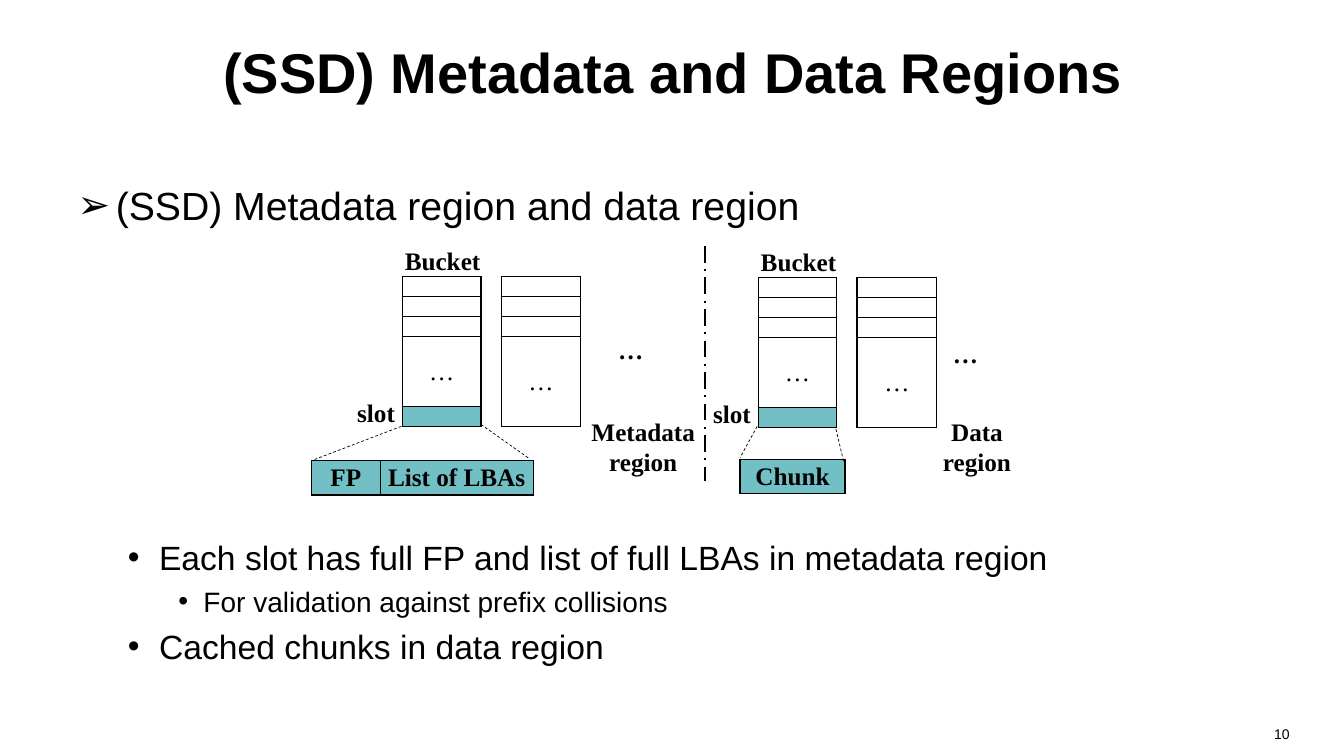
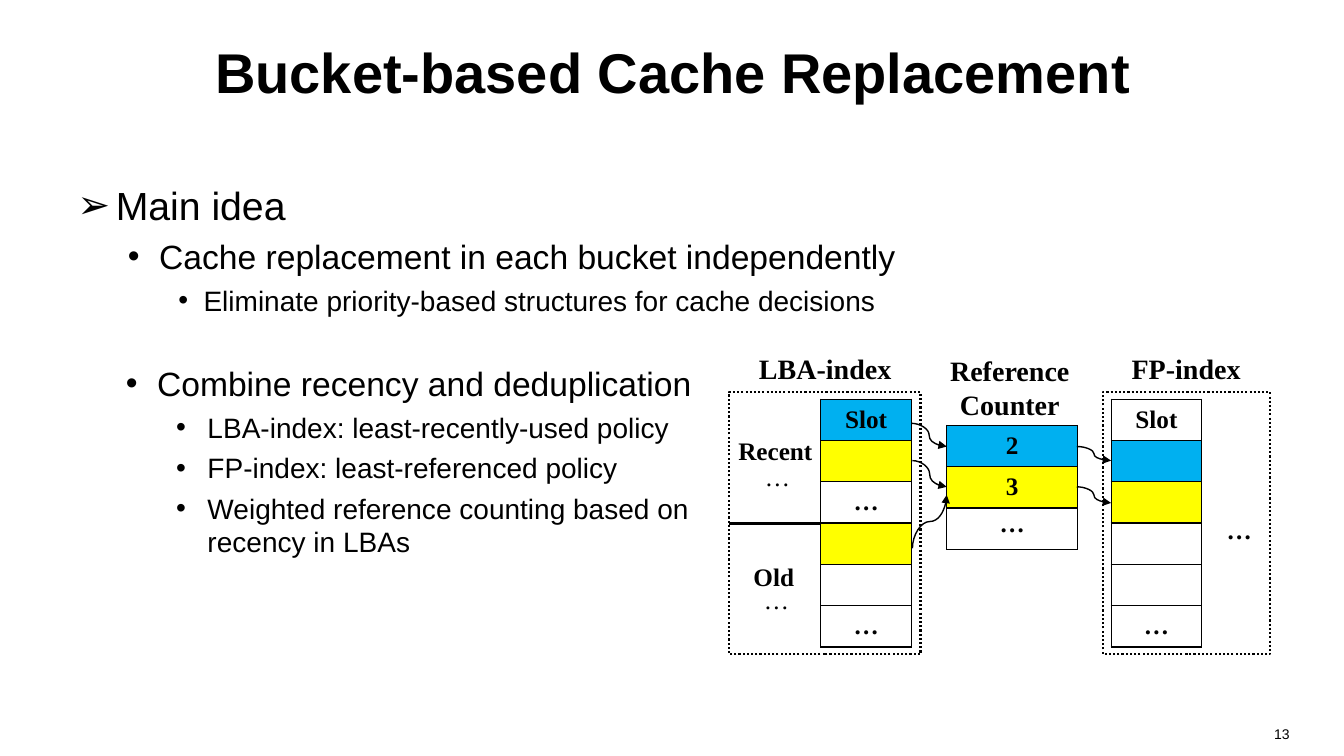
from lxml.etree import SubElement
from pptx import Presentation
from pptx.dml.color import RGBColor
from pptx.enum.dml import MSO_LINE
from pptx.enum.shapes import MSO_CONNECTOR, MSO_SHAPE
from pptx.enum.text import MSO_ANCHOR, PP_ALIGN
from pptx.oxml.ns import qn
from pptx.util import Pt

PX = 9144  # EMU: 100 px to the inch
BLACK, TEAL, BLUE, YELLOW = "000000", "72BFC5", "00B0F0", "FFFF00"
SANS, SERIF = "Arial", "Times New Roman"
EMPTY = ("", None)
DOTS = ("…", None)
SLOT_ROW = 41
# level: bullet, text indent, hanging indent, size, space before
LEVELS = {
    0: ("➢", 38, 38, 28, 0),
    1: ("•", 81, 31, 24, 5.5),
    2: ("•", 125, 25, 20, 5),
}
WIDE_LEVELS = LEVELS | {2: ("•", 131, 31, 20, 5)}


def px(*lengths):
    return [round(length * PX) for length in lengths]


def color(hex_value):
    return RGBColor.from_string(hex_value)


def set_values(target, values):
    for name, value in values.items():
        setattr(target, name, value)


def write(paragraph, text, size, font=SANS, bold=False, align=PP_ALIGN.LEFT):
    paragraph.alignment = align
    run = paragraph.add_run()
    run.text = text
    set_values(run.font, {"name": font, "size": Pt(size), "bold": bold})
    run.font.color.rgb = color(BLACK)


def add_frame(slide, box, inset=True, **values):
    frame = slide.shapes.add_textbox(*px(*box)).text_frame
    set_values(frame, {"word_wrap": True} | values)
    if not inset:
        clear_margins(frame)
    return frame


def clear_margins(target):
    sides = ("left", "right", "top", "bottom")
    set_values(target, {f"margin_{side}": 0 for side in sides})


def add_label(slide, text, box, size=18, bold=True):
    frame = add_frame(slide, box, inset=False, word_wrap=False)
    for index, line in enumerate(text.split("\n")):
        paragraph = frame.add_paragraph() if index else frame.paragraphs[0]
        write(paragraph, line, size, SERIF, bold, PP_ALIGN.CENTER)


def add_bullets(slide, box, items, levels=LEVELS):
    """Write items of (level, text, extra space before in points)."""
    frame = add_frame(slide, box)
    for index, (level, text, gap) in enumerate(items):
        bullet, indent, hanging, size, space = levels[level]
        paragraph = frame.add_paragraph() if index else frame.paragraphs[0]
        paragraph.level = level
        if index:
            paragraph.space_before = Pt(space + gap)
        write(paragraph, text, size)
        properties = paragraph._p.get_or_add_pPr()
        properties.set("marL", str(indent * PX))
        properties.set("indent", str(-hanging * PX))
        SubElement(properties, qn("a:buFont"), typeface=SANS)
        SubElement(properties, qn("a:buChar"), char=bullet)


def add_page(deck, title, number):
    slide = deck.slides.add_slide(deck.slide_layouts[6])
    heading = add_frame(slide, (67, 8, 1200, 125),
                        vertical_anchor=MSO_ANCHOR.MIDDLE)
    write(heading.paragraphs[0], title, 40, bold=True, align=PP_ALIGN.CENTER)
    footer = add_frame(slide, (978, 715, 311, 35))
    write(footer.paragraphs[0], number, 10, align=PP_ALIGN.RIGHT)
    return slide


def add_borders(cell):
    properties = cell._tc.get_or_add_tcPr()
    for side in ("lnL", "lnR", "lnT", "lnB"):
        border = SubElement(properties, qn(f"a:{side}"), w=str(Pt(1)))
        fill = SubElement(border, qn("a:solidFill"))
        SubElement(fill, qn("a:srgbClr"), val=BLACK)


def fill_cell(cell, text, fill, bold):
    clear_margins(cell)
    cell.vertical_anchor = MSO_ANCHOR.MIDDLE
    add_borders(cell)
    if fill:
        cell.fill.solid()
        cell.fill.fore_color.rgb = color(fill)
    else:
        cell.fill.background()
    paragraph = cell.text_frame.paragraphs[0]
    if text:
        write(paragraph, text, 18, SERIF, bold, PP_ALIGN.CENTER)
    else:  # a small end mark keeps a low row from growing
        SubElement(paragraph._p, qn("a:endParaRPr"), sz="800")


def add_grid(slide, left, top, widths, heights, cells, bold=True):
    """Draw a bordered table; cells are rows of (text, fill)."""
    box = px(left, top, sum(widths), sum(heights))
    table = slide.shapes.add_table(len(heights), len(widths), *box).table
    set_values(table, {"first_row": False, "horz_banding": False})
    for column, width in zip(table.columns, px(*widths)):
        column.width = width
    for row, height, contents in zip(table.rows, px(*heights), cells):
        row.height = height
        for cell, (text, fill) in zip(row.cells, contents):
            fill_cell(cell, text, fill, bold)


def add_column(slide, left, top, width, heights, cells, bold=True):
    add_grid(slide, left, top, [width], heights, [[c] for c in cells], bold)


def add_line(slide, start, end, width, dash=None, kind=MSO_CONNECTOR.STRAIGHT):
    line = slide.shapes.add_connector(kind, *px(*start, *end))
    line.line.color.rgb = color(BLACK)
    set_values(line.line, {"width": Pt(width), "dash_style": dash})
    SubElement(line._element.spPr, qn("a:effectLst"))
    return line


def add_curve(slide, start, end, upright=False):
    """Draw a curved arrow; an upright one leaves and arrives vertically."""
    if upright:
        middle = [(a + b) / 2 for a, b in zip(start, end)]
        start, end = [(middle[0] + y - middle[1], middle[1] - x + middle[0])
                      for x, y in (start, end)]
    curve = add_line(slide, start, end, 1, kind=MSO_CONNECTOR.CURVE)
    if upright:
        curve._element.spPr.find(qn("a:xfrm")).set("rot", str(90 * 60000))
    SubElement(curve.line._get_or_add_ln(), qn("a:tailEnd"), type="triangle")


def add_dotted_box(slide, box):
    outline = slide.shapes.add_shape(MSO_SHAPE.RECTANGLE, *px(*box))
    outline.shadow.inherit = False
    outline.fill.background()
    outline.line.color.rgb = color(BLACK)
    set_values(outline.line,
               {"width": Pt(1.5), "dash_style": MSO_LINE.ROUND_DOT})
    return outline


def add_buckets(slide, left, top):
    """Draw two buckets, the first with a highlighted last slot."""
    add_label(slide, "Bucket", (left + 2, top - 31, 76, 30))
    add_label(slide, "slot", (left - 45, top + 120, 38, 30))
    add_column(slide, left + 98, top, 79, [20, 20, 20, 89],
               [EMPTY] * 3 + [DOTS], bold=False)
    add_column(slide, left, top, 78, [20, 20, 20, 69, 20],
               [EMPTY] * 3 + [DOTS, ("", TEAL)], bold=False)


def build_regions(deck):
    slide = add_page(deck, "(SSD) Metadata and Data Regions", "10")
    add_bullets(slide, (67, 175, 1200, 505), [
        (0, "(SSD) Metadata region and data region", 0),
        (1, "Each slot has full FP and list of full LBAs in metadata region",
         215),
        (2, "For validation against prefix collisions", 0),
        (1, "Cached chunks in data region", 0),
    ])
    for text, box in (
        ("Metadata\nregion", (582, 413, 112, 61)),
        ("Data\nregion", (933, 413, 72, 61)),
        ("…", (608, 332, 35, 30)),
        ("…", (940, 336, 35, 30)),
    ):
        add_label(slide, text, box)
    add_grid(slide, 309, 457, [68, 152], [34],
             [[("FP", TEAL), ("List of LBAs", TEAL)]])
    add_grid(slide, 734, 456, [104], [34], [[("Chunk", TEAL)]])
    add_line(slide, (699, 244), (699, 477), 1.5, MSO_LINE.LONG_DASH_DOT)
    for start, end in (
        ((398, 423), (309, 457)),
        ((477, 421), (525, 455)),
        ((751, 423), (734, 454)),
        ((828, 421), (837, 459)),
    ):
        add_line(slide, start, end, 0.5, MSO_LINE.DASH)
    add_buckets(slide, 399, 274)
    add_buckets(slide, 752, 275)


def build_replacement(deck):
    slide = add_page(deck, "Bucket-based Cache Replacement", "13")
    add_bullets(slide, (67, 175, 1075, 147), [
        (0, "Main idea", 0),
        (1, "Cache replacement in each bucket independently", 0),
        (2, "Eliminate priority-based structures for cache decisions", 0),
    ])
    add_bullets(slide, (65, 355, 644, 327), [
        (1, "Combine recency and deduplication", 0),
        (2, "LBA-index: least-recently-used policy", 0),
        (2, "FP-index: least-referenced policy", 0),
        (2, "Weighted reference counting based on recency in LBAs", 0),
    ], WIDE_LEVELS)
    blue, yellow = ("", BLUE), ("", YELLOW)
    for left, top, width, cells in (
        (814, 396, 90, [("Slot", BLUE), yellow, DOTS, yellow, EMPTY, DOTS]),
        (939, 422, 130, [("2", BLUE), ("3", YELLOW), EMPTY]),
        (1102, 396, 90, [("Slot", None), blue, yellow, EMPTY, EMPTY, DOTS]),
    ):
        add_column(slide, left, top, width, [SLOT_ROW] * len(cells), cells)
    lba_index = add_dotted_box(slide, (723, 389, 190, 260))
    add_dotted_box(slide, (1094, 389, 166, 260))
    age_divider = add_line(slide, (814, 519), (723, 519), 2)
    age_divider.end_connect(lba_index, 1)
    for text, box, size, bold in (
        ("LBA-index", (736, 349, 165, 34), 20, True),
        ("Reference\nCounter", (922, 351, 159, 67), 20, True),
        ("FP-index", (1108, 349, 137, 34), 20, True),
        ("Recent", (727, 432, 84, 30), 18, True),
        ("…", (735, 458, 72, 30), 18, False),
        ("Old", (716, 557, 103, 30), 18, True),
        ("…", (734, 580, 72, 30), 18, False),
        ("…", (968, 503, 72, 30), 18, True),
        ("…", (1199, 510, 60, 30), 18, True),
    ):
        add_label(slide, text, box, size, bold)
    for start, end in (
        ((904, 420), (939, 443)),
        ((905, 457), (939, 483)),
        ((1068, 443), (1102, 457)),
        ((1068, 483), (1102, 499)),
    ):
        add_curve(slide, start, end)
    add_curve(slide, (905, 544), (939, 491), upright=True)


def main():
    deck = Presentation()
    deck.slide_width, deck.slide_height = px(1333, 750)
    build_regions(deck)
    build_replacement(deck)
    deck.save("out.pptx")


if __name__ == "__main__":
    main()
